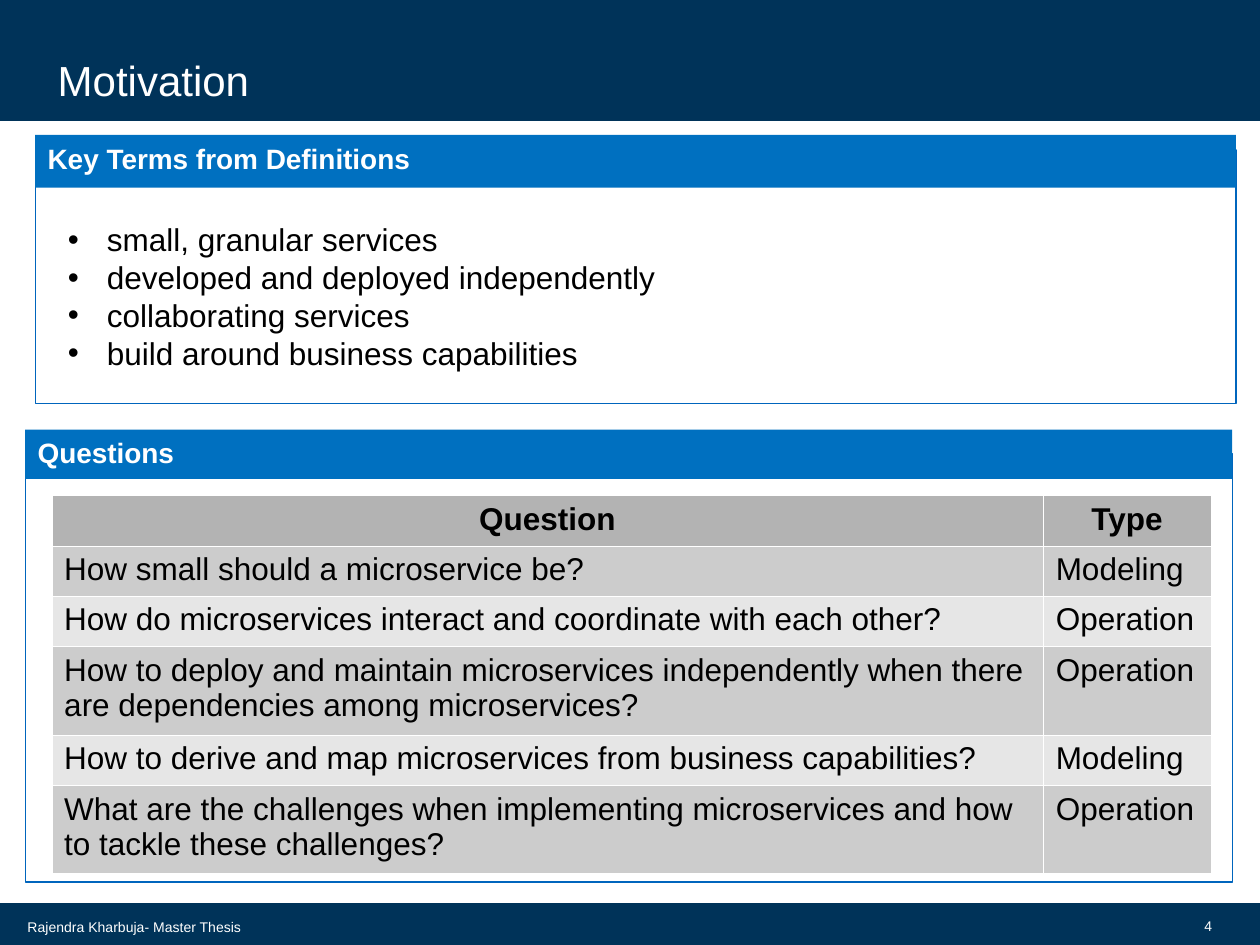
from lxml.etree import SubElement
from pptx import Presentation
from pptx.dml.color import RGBColor
from pptx.enum.shapes import MSO_SHAPE
from pptx.enum.text import MSO_ANCHOR, PP_ALIGN
from pptx.oxml.ns import qn
from pptx.util import Inches, Pt

TITLE = "Motivation"
FOOT = "Rajendra Kharbuja- Master Thesis"
PAGE = "4"
TERMS = [
    "small, granular services",
    "developed and deployed independently",
    "collaborating services",
    "build around business capabilities",
]
ROWS = [
    ("Question", "Type"),
    ("How small should a microservice be?", "Modeling"),
    ("How do microservices interact and coordinate with each other?", "Operation"),
    ("How to deploy and maintain microservices independently when there "
     "are dependencies among microservices?", "Operation"),
    ("How to derive and map microservices from business capabilities?", "Modeling"),
    ("What are the challenges when implementing microservices and how "
     "to tackle these challenges?", "Operation"),
]
PANELS = [
    ("Key Terms from Definitions", (0.28, 1.07, 9.53, 0.42), (1.19, 2.01)),
    ("Questions", (0.2, 3.41, 9.58, 0.39), (3.6, 3.4)),
]
COLORS = {
    "navy": "003359", "blue": "0070C0", "edge": "0065BD",
    "white": "FFFFFF", "black": "000000",
    "head": "B3B3B3", "odd": "CCCCCC", "even": "E6E6E6",
}
FONT = "Arial"
WIDE, HIGH = 10, 7.5
COLS = (7.87, 1.33)
LINE, PAD = 0.28, 0.1
FIT = 65


def rgb(name):
    return RGBColor.from_string(COLORS[name])


def write(para, text, size, color, bold=False):
    run = para.add_run()
    run.text = text
    font = run.font
    font.name, font.size, font.bold = FONT, Pt(size), bold
    font.color.rgb = rgb(color)


def inset(frame, side, edge):
    frame.margin_left = frame.margin_right = Inches(side)
    frame.margin_top = frame.margin_bottom = Inches(edge)


def box(slide, area, fill=None, line=None, width=0.75):
    shape = slide.shapes.add_shape(MSO_SHAPE.RECTANGLE, *map(Inches, area))
    shape.shadow.inherit = False
    if fill:
        shape.fill.solid()
        shape.fill.fore_color.rgb = rgb(fill)
    else:
        shape.fill.background()
    if line:
        shape.line.color.rgb = rgb(line)
        shape.line.width = Pt(width)
    else:
        shape.line.fill.background()
    return shape


def label(slide, area, text, size, anchor, align=PP_ALIGN.LEFT, edge=0.05):
    frame = slide.shapes.add_textbox(*map(Inches, area)).text_frame
    frame.word_wrap = True
    frame.vertical_anchor = anchor
    inset(frame, 0.1, edge)
    para = frame.paragraphs[0]
    para.alignment = align
    write(para, text, size, "white")


def panel(slide, text, bar, body):
    left, _, width, _ = bar
    top, height = body
    box(slide, (left, top, width, height), line="edge")
    frame = box(slide, bar, fill="blue").text_frame
    frame.word_wrap = True
    frame.vertical_anchor = MSO_ANCHOR.TOP
    inset(frame, 0.1, 0.05)
    para = frame.paragraphs[0]
    para.alignment = PP_ALIGN.LEFT
    write(para, text, 16, "white", True)


def bullets(slide, area, items):
    frame = slide.shapes.add_textbox(*map(Inches, area)).text_frame
    frame.word_wrap = True
    for i, item in enumerate(items):
        para = frame.add_paragraph() if i else frame.paragraphs[0]
        props = para._p.get_or_add_pPr()
        props.set("marL", str(Inches(0.31)))
        props.set("indent", str(-Inches(0.31)))
        SubElement(props, qn("a:buFont"), typeface=FONT)
        SubElement(props, qn("a:buChar"), char="•")
        write(para, item, 18, "black")


def border(cell):
    props = cell._tc.get_or_add_tcPr()
    for i, side in enumerate(("lnL", "lnR", "lnT", "lnB")):
        line = props.makeelement(qn("a:" + side), {"w": str(Pt(0.06))})
        fill = SubElement(line, qn("a:solidFill"))
        SubElement(fill, qn("a:srgbClr"), val=COLORS["white"])
        props.insert(i, line)


def grid(slide, left, top):
    highs = [PAD + LINE * (1 + (len(row[0]) > FIT)) for row in ROWS]
    area = (left, top, sum(COLS), sum(highs))
    table = slide.shapes.add_table(len(ROWS), len(COLS), *map(Inches, area)).table
    table.first_row = table.horz_banding = False
    for col, width in zip(table.columns, COLS):
        col.width = Inches(width)
    for r, row in enumerate(ROWS):
        table.rows[r].height = Inches(highs[r])
        tone = ("odd" if r % 2 else "even") if r else "head"
        for c, text in enumerate(row):
            cell = table.cell(r, c)
            cell.fill.solid()
            cell.fill.fore_color.rgb = rgb(tone)
            border(cell)
            para = cell.text_frame.paragraphs[0]
            para.alignment = PP_ALIGN.LEFT if r else PP_ALIGN.CENTER
            write(para, text, 18, "black", r == 0)


def main():
    deck = Presentation()
    deck.slide_width, deck.slide_height = Inches(WIDE), Inches(HIGH)
    slide = deck.slides.add_slide(deck.slide_layouts[6])
    for top, height in ((HIGH - 0.32, 0.32), (0, 0.95)):
        box(slide, (0, top, WIDE, height), "navy", "navy", 1.35)
    label(slide, (9.45, 7.19, 0.27, 0.31), PAGE, 8, MSO_ANCHOR.MIDDLE, PP_ALIGN.RIGHT)
    label(slide, (0.36, 0.44, 8.24, 0.39), TITLE, 24, MSO_ANCHOR.BOTTOM, edge=0)
    for part in PANELS:
        panel(slide, *part)
    bullets(slide, (0.44, 1.7, 7.56, 1.59), TERMS)
    grid(slide, 0.41, 3.93)
    label(slide, (0.12, 7.2, 2.13, 0.31), FOOT, 8, MSO_ANCHOR.MIDDLE)
    deck.save("out.pptx")


if __name__ == "__main__":
    main()
